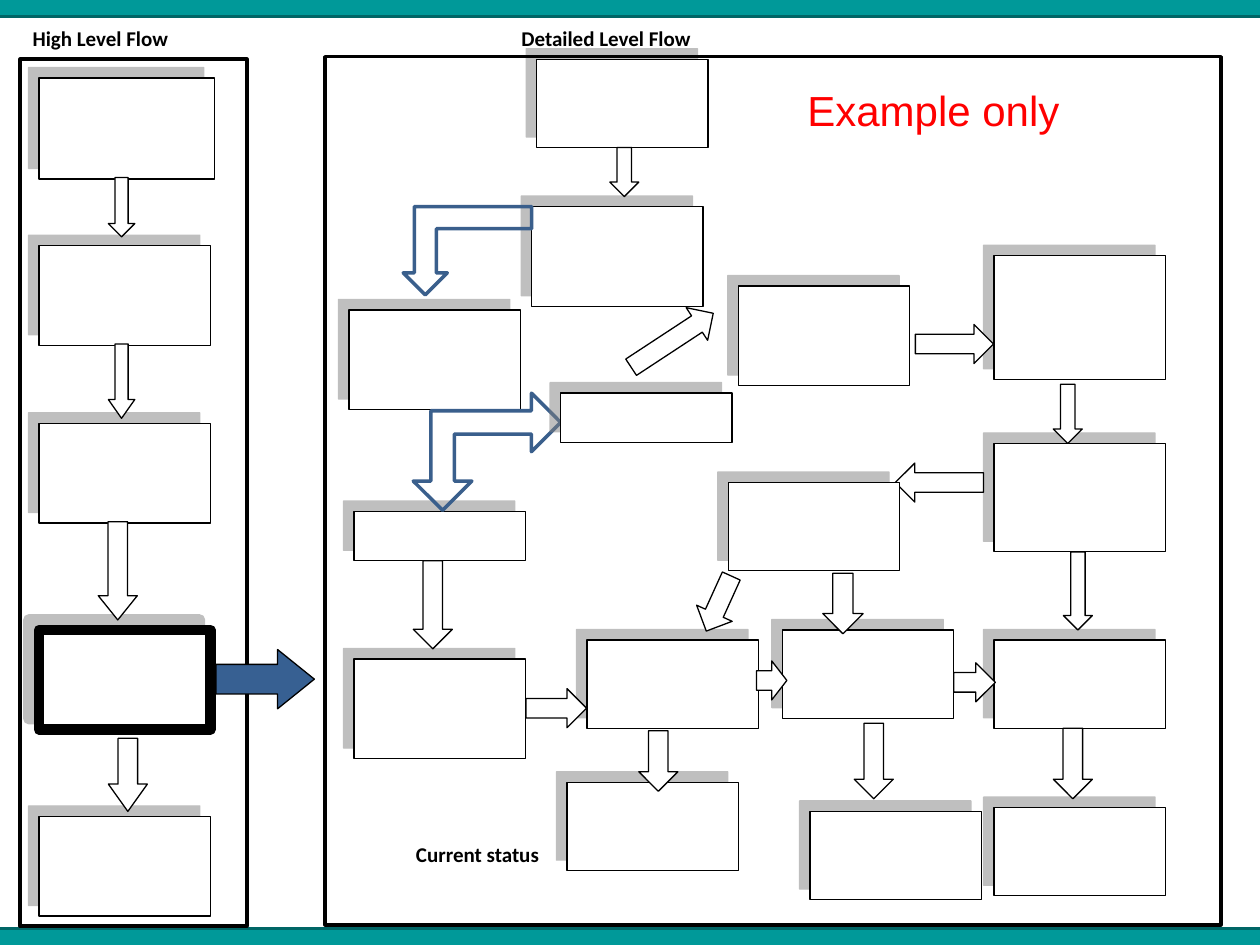
"""Build a process map slide: high level flow beside a detailed level flow."""
from lxml.etree import SubElement
from pptx import Presentation
from pptx.dml.color import RGBColor
from pptx.enum.shapes import MSO_CONNECTOR, MSO_SHAPE
from pptx.enum.text import PP_ALIGN
from pptx.oxml.ns import qn
from pptx.util import Inches, Pt

TEAL = RGBColor(0x00, 0x99, 0x99)
DARK_TEAL = RGBColor(0x00, 0x66, 0x66)
BLACK = RGBColor(0x00, 0x00, 0x00)
WHITE = RGBColor(0xFF, 0xFF, 0xFF)
RED = RGBColor(0xFF, 0x00, 0x00)
BLUE = RGBColor(0x37, 0x60, 0x92)
OUTLINE_BLUE = RGBColor(0x3A, 0x5F, 0x8C)

STEP_WIDTH = 1.36


def add_part(preset, frame, fill=None, line=BLACK, weight=0.75, rotation=0, adjustments=()):
    part = slide.shapes.add_shape(preset, *map(Inches, frame))
    part.shadow.inherit = False
    part.rotation = rotation
    for index, value in enumerate(adjustments):
        part.adjustments[index] = value
    if fill is None:
        part.fill.background()
    else:
        part.fill.solid()
        part.fill.fore_color.rgb = fill
    if line is None:
        part.line.fill.background()
    else:
        part.line.color.rgb = line
        part.line.width = Pt(weight)
    return part


def add_step(left, top, height, width=STEP_WIDTH, weight=0.75):
    step = add_part(MSO_SHAPE.FLOWCHART_PROCESS, (left, top, width, height), WHITE, weight=weight)
    effects = step.element.spPr.find(qn("a:effectLst"))
    shadow = SubElement(effects, qn("a:outerShdw"), dist=str(Pt(8.5)), dir="13500000",
                        algn="ctr", rotWithShape="0")
    color = SubElement(shadow, qn("a:srgbClr"), val="808080")
    SubElement(color, qn("a:alpha"), val="50000")


presentation = Presentation()
presentation.slide_width = Inches(10)
presentation.slide_height = Inches(7.5)
slide = presentation.slides.add_slide(presentation.slide_layouts[6])

for band_top, edge_top in ((0, 0.13), (7.37, 7.37)):
    add_part(MSO_SHAPE.RECTANGLE, (0, band_top, 10, 0.13), TEAL, line=None)
    edge = slide.shapes.add_connector(
        MSO_CONNECTOR.STRAIGHT, 0, Inches(edge_top), Inches(10), Inches(edge_top))
    edge.line.color.rgb = DARK_TEAL
    edge.line.width = Pt(2)
    SubElement(edge.element.spPr, qn("a:effectLst"))

add_part(MSO_SHAPE.RECTANGLE, (0.16, 0.47, 1.8, 6.88), weight=2)
add_step(0.31, 0.62, 0.8, width=1.39)
for top, weight in ((1.95, 0.75), (3.36, 0.75), (5, 6), (6.48, 0.75)):
    add_step(0.31, top, 0.79, weight=weight)

detailed_steps = [
    (4.26, 0.47, 0.7), (4.22, 1.64, 0.79), (2.77, 2.46, 0.79), (5.86, 2.27, 0.79),
    (2.81, 4.06, 0.39), (2.81, 5.23, 0.79),
    (7.89, 2.03, 0.98), (7.89, 3.52, 0.86), (7.89, 5.08, 0.7), (7.89, 6.41, 0.7),
    (4.66, 5.08, 0.7), (4.5, 6.21, 0.7), (6.21, 5, 0.7), (6.43, 6.44, 0.7),
]
for left, top, height in detailed_steps:
    add_step(left, top, height)

arrows = [
    (0.86, 1.41, 0.21, 0.47, 0, 0.5),
    (0.86, 2.73, 0.21, 0.59, 0, 0.71),
    (0.78, 4.14, 0.31, 0.78, 0, 0.62),
    (0.86, 5.86, 0.31, 0.58, 0, 0.7),
    (4.84, 1.17, 0.23, 0.39, 0, 0.5),
    (5.18, 2.31, 0.31, 0.78, 236.7, 0.5),
    (7.42, 2.42, 0.31, 0.62, 270, 0.5),
    (8.36, 3.05, 0.23, 0.47, 0, 0.5),
    (7.3, 3.48, 0.31, 0.7, 90, 0.5),
    (8.44, 4.38, 0.23, 0.62, 0, 0.5),
    (8.36, 5.78, 0.31, 0.56, 0, 0.5),
    (3.28, 4.45, 0.31, 0.7, 0, 0.5),
    (4.26, 5.38, 0.31, 0.48, 270, 0.5),
    (5.97, 5.28, 0.31, 0.24, 270, 0.5),
    (7.58, 5.25, 0.31, 0.33, 270, 0.5),
    (5.55, 4.55, 0.31, 0.48, 24.4, 0.5),
    (6.53, 4.55, 0.32, 0.48, 0, 0.5),
    (5.07, 5.8, 0.31, 0.48, 0, 0.5),
    (6.78, 5.74, 0.31, 0.6, 0, 0.5),
]
for *frame, rotation, head in arrows:
    add_part(MSO_SHAPE.DOWN_ARROW, frame, WHITE, rotation=rotation, adjustments=(0.5, head))

add_part(MSO_SHAPE.LEFT_UP_ARROW, (3.28, 3.12, 1.17, 0.93), line=OUTLINE_BLUE, weight=2,
         rotation=180, adjustments=(0.2, 0.25, 0.25))
add_part(MSO_SHAPE.BENT_UP_ARROW, (3.2, 1.64, 1.02, 0.7), line=OUTLINE_BLUE, weight=2,
         rotation=180)
add_step(4.45, 3.12, 0.39)
add_step(5.78, 3.83, 0.7)

add_part(MSO_SHAPE.RECTANGLE, (2.58, 0.45, 7.11, 6.89), weight=2)
add_part(MSO_SHAPE.DOWN_ARROW, (1.87, 5, 0.47, 0.78), BLUE, rotation=270,
         adjustments=(0.5, 0.62))

labels = [
    ("High Level Flow", (0.16, 0.15, 2.19, 0.3), PP_ALIGN.LEFT, "Calibri", 12, True, BLACK),
    ("Detailed Level Flow", (4.04, 0.15, 3.28, 0.3), PP_ALIGN.LEFT, "Calibri", 12, True, BLACK),
    ("Current status", (2.5, 6.63, 2.58, 0.3), PP_ALIGN.CENTER, "Calibri", 12, True, BLACK),
    ("Example only ", (6.24, 0.62, 2.43, 0.4), PP_ALIGN.CENTER, "Arial", 24, False, RED),
]
for wording, frame, alignment, typeface, size, bold, color in labels:
    label = slide.shapes.add_textbox(*map(Inches, frame))
    label.text_frame.word_wrap = True
    label.text_frame.text = wording
    paragraph = label.text_frame.paragraphs[0]
    paragraph.alignment = alignment
    font = paragraph.runs[0].font
    font.name = typeface
    font.size = Pt(size)
    font.bold = bold
    font.color.rgb = color

presentation.save("out.pptx")
